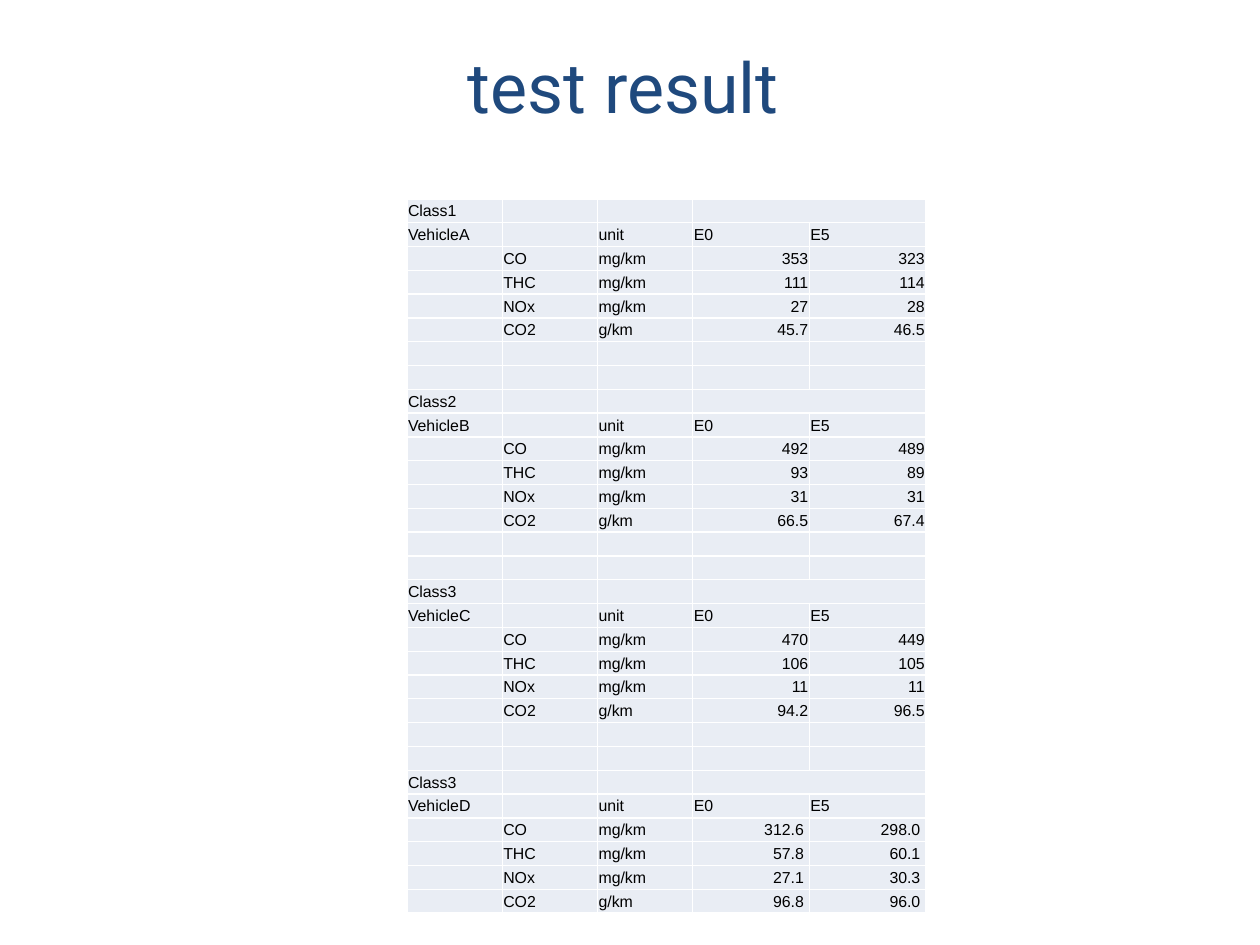
from dataclasses import dataclass

from lxml.etree import SubElement
from pptx import Presentation
from pptx.dml.color import RGBColor
from pptx.enum.text import MSO_ANCHOR as Anchor, PP_ALIGN as Align
from pptx.oxml.ns import qn
from pptx.util import Cm, Inches, Pt


@dataclass(frozen=True)
class Theme:
    title_font: str = "Roboto"
    title_size: int = 44
    title_color: str = "1F497D"
    table_font: str = "Arial"
    table_size: int = 10
    table_color: str = "000000"
    cell_fill: str = "E9EDF4"
    border_color: str = "FFFFFF"
    border_width: int = 1


THEME = Theme()
SLIDE_WIDTH, SLIDE_HEIGHT = Cm(28), Cm(21)
TITLE_BOX = (0.57, 0.21, 9.92, 1.08)
TABLE_BOX = (3.56, 1.74, 4.54, 6.25)
COLUMN_SHARES = (9, 9, 9, 11, 11)
GAP_ROWS = 2
CELL_MARGIN = 0.01

POLLUTANTS = (("CO", "mg/km"), ("THC", "mg/km"), ("NOx", "mg/km"), ("CO2", "g/km"))
# Class, vehicle, (E0, E5) by pollutant
VEHICLES = (
    ("Class1", "VehicleA",
     (("353", "323"), ("111", "114"), ("27", "28"), ("45.7", "46.5"))),
    ("Class2", "VehicleB",
     (("492", "489"), ("93", "89"), ("31", "31"), ("66.5", "67.4"))),
    ("Class3", "VehicleC",
     (("470", "449"), ("106", "105"), ("11", "11"), ("94.2", "96.5"))),
    ("Class3", "VehicleD",
     (("312.6 ", "298.0 "), ("57.8 ", "60.1 "), ("27.1 ", "30.3 "), ("96.8 ", "96.0 "))),
)
BLOCK_STEP = 2 + len(POLLUTANTS) + GAP_ROWS


def apply_format(target, values):
    for name, value in values.items():
        setattr(target, name, value)


def write_text(paragraph, text, font, size, color):
    run = paragraph.add_run()
    run.text = text
    apply_format(run.font, {"name": font, "size": Pt(size)})
    run.font.color.rgb = RGBColor.from_string(color)


def add_title(slide, box, text):
    frame = slide.shapes.add_textbox(*map(Inches, box)).text_frame
    apply_format(frame, {
        "word_wrap": True, "vertical_anchor": Anchor.MIDDLE,
        "margin_left": 0, "margin_right": 0, "margin_top": 0, "margin_bottom": 0,
    })
    paragraph = frame.paragraphs[0]
    paragraph.alignment = Align.CENTER
    write_text(paragraph, text, THEME.title_font, THEME.title_size, THEME.title_color)


def style_cell(cell):
    """Set margins, borders and fill, and keep an empty cell at the table's text size."""
    apply_format(cell, {
        "vertical_anchor": Anchor.MIDDLE,
        "margin_left": Inches(CELL_MARGIN), "margin_right": Inches(CELL_MARGIN),
        "margin_top": Inches(CELL_MARGIN), "margin_bottom": 0,
    })
    properties = cell._tc.get_or_add_tcPr()
    for side in ("lnL", "lnR", "lnT", "lnB"):
        line = SubElement(properties, qn(f"a:{side}"), w=str(Pt(THEME.border_width)))
        fill = SubElement(line, qn("a:solidFill"))
        SubElement(fill, qn("a:srgbClr"), val=THEME.border_color)
    cell.fill.solid()
    cell.fill.fore_color.rgb = RGBColor.from_string(THEME.cell_fill)
    SubElement(cell.text_frame.paragraphs[0]._p, qn("a:endParaRPr"),
               sz=str(THEME.table_size * 100))


def fill_row(table, row, texts):
    for column, text in enumerate(texts):
        if text:
            paragraph = table.cell(row, column).text_frame.paragraphs[0]
            write_text(paragraph, text, THEME.table_font, THEME.table_size,
                       THEME.table_color)


def fill_vehicle(table, top, class_name, vehicle, results):
    """Fill one vehicle's block of rows, starting at row top."""
    table.cell(top, 3).merge(table.cell(top, 4))
    fill_row(table, top, (class_name,))
    fill_row(table, top + 1, (vehicle, "", "unit", "E0", "E5"))
    for row, (labels, values) in enumerate(zip(POLLUTANTS, results), top + 2):
        fill_row(table, row, ("", *labels, *values))
        for column in (3, 4):
            table.cell(row, column).text_frame.paragraphs[0].alignment = Align.RIGHT


def add_results_table(slide, box):
    row_count = len(VEHICLES) * BLOCK_STEP - GAP_ROWS
    table = slide.shapes.add_table(
        row_count, len(COLUMN_SHARES), *map(Inches, box)).table
    apply_format(table, {"first_row": False, "horz_banding": False})
    for column, share in zip(table.columns, COLUMN_SHARES):
        column.width = Inches(box[2] * share / sum(COLUMN_SHARES))
    for row in table.rows:
        row.height = Inches(box[3] / row_count)
    for cell in table.iter_cells():
        style_cell(cell)
    for index, vehicle in enumerate(VEHICLES):
        fill_vehicle(table, index * BLOCK_STEP, *vehicle)


def main():
    presentation = Presentation()
    apply_format(presentation, {"slide_width": SLIDE_WIDTH, "slide_height": SLIDE_HEIGHT})
    slide = presentation.slides.add_slide(presentation.slide_layouts[6])
    add_title(slide, TITLE_BOX, "test result ")
    add_results_table(slide, TABLE_BOX)
    presentation.save("out.pptx")


if __name__ == "__main__":
    main()
